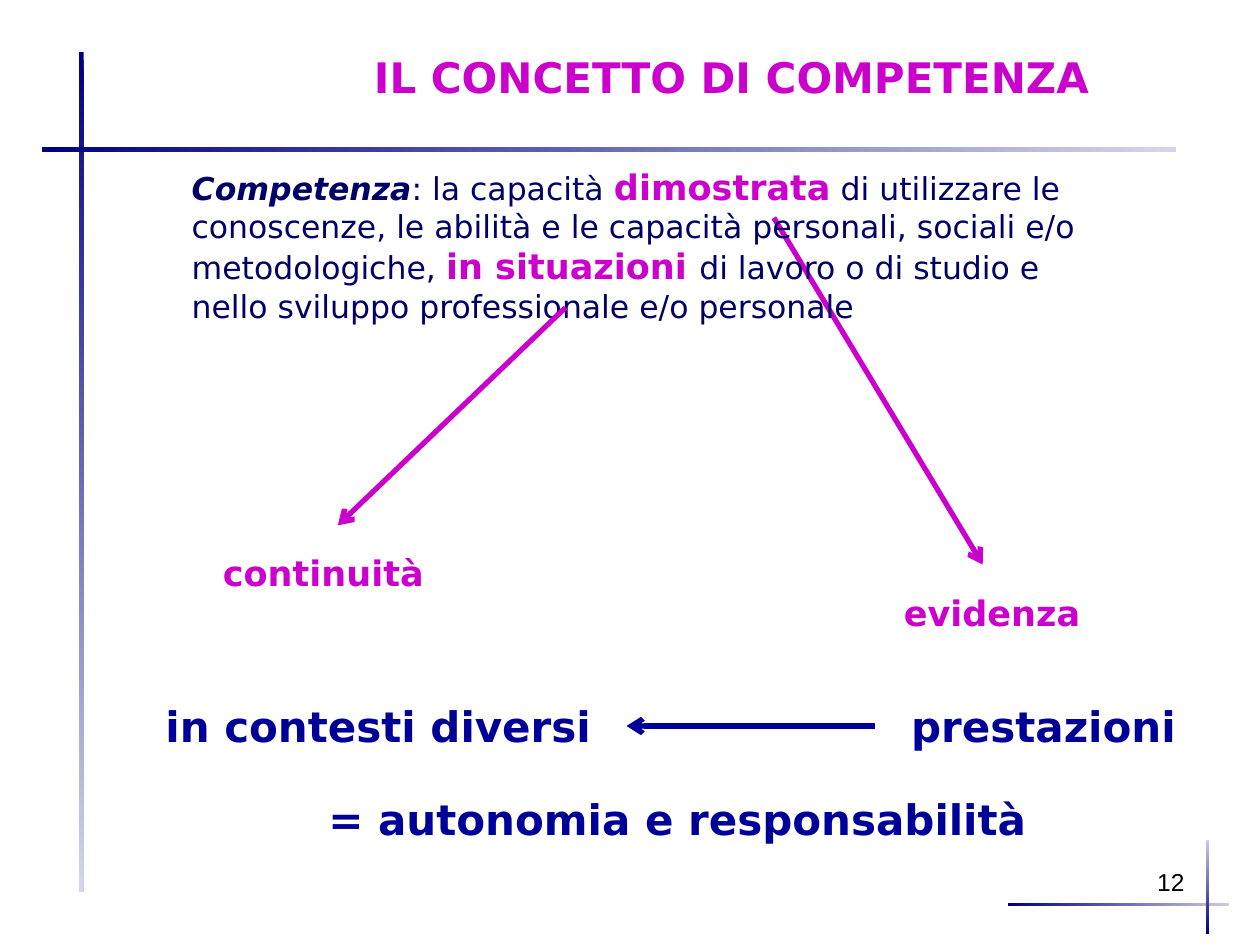
from dataclasses import dataclass

from lxml import etree
from pptx import Presentation
from pptx import util as u
from pptx.dml.color import RGBColor
from pptx.enum import shapes, text
from pptx.oxml.ns import qn


@dataclass(frozen=True)
class Theme:
    font: str = "DejaVu Sans"
    number_font: str = "Arial"
    accent: str = "CC00CC"
    body: str = "000066"
    strong: str = "000099"
    black: str = "000000"
    bar_dark: str = "000080"
    bar_light: str = "D5D5EA"
    corner_light: str = "CBCBE5"
    heading_size: int = 24
    label_size: int = 20
    body_size: int = 18
    number_size: int = 14
    arrow_width: int = 3


class SlideBuilder:
    def __init__(self, deck, theme):
        self.theme = theme
        self.slide = deck.slides.add_slide(deck.slide_layouts[1])

    def style(self, font, size, color, bold=False, italic=False, name=None):
        font.name = name or self.theme.font
        font.size = u.Pt(size)
        font.bold = bold
        font.italic = italic
        font.color.rgb = RGBColor.from_string(color)

    def frame(self, box):
        frame = box.text_frame
        frame.word_wrap = True
        frame.auto_size = text.MSO_AUTO_SIZE.NONE
        frame.vertical_anchor = text.MSO_ANCHOR.TOP
        return frame

    def place(self, box, left, top, width, height):
        box.left, box.top = u.Cm(left), u.Cm(top)
        box.width, box.height = u.Cm(width), u.Cm(height)
        # Bring the placeholder in front of what is already drawn
        self.slide.shapes.element.append(box.element)

    def title(self, words, *area):
        box = self.slide.shapes.title
        self.place(box, *area)
        para = self.frame(box).paragraphs[0]
        para.text = words
        para.alignment = text.PP_ALIGN.CENTER
        self.style(para.font, self.theme.heading_size, self.theme.accent, bold=True)

    def body(self, spans, *area):
        box = self.slide.placeholders[1]
        self.place(box, *area)
        para = self.frame(box).paragraphs[0]
        para.space_before = u.Pt(0)
        properties = para._p.get_or_add_pPr()
        properties.set("marL", "0")
        properties.set("indent", "0")
        etree.SubElement(properties, qn("a:buNone"))
        for words, *look in spans:
            span = para.add_run()
            span.text = words
            self.style(span.font, *look)

    def label(self, words, size, color, *area, bold=True, name=None,
              align=text.PP_ALIGN.CENTER):
        box = self.slide.shapes.add_textbox(*map(u.Cm, area))
        para = self.frame(box).paragraphs[0]
        para.text = words
        para.alignment = align
        self.style(para.font, size, color, bold, name=name)
        return box

    def bar(self, first, last, *area):
        left, top, width, height = map(u.Cm, area)
        bar = self.slide.shapes.add_shape(
            shapes.MSO_SHAPE.RECTANGLE, left, top, width, height)
        bar.shadow.inherit = False
        bar.line.fill.background()
        bar.fill.gradient()
        bar.fill.gradient_angle = 270 if height > width else 0
        for stop, color in zip(bar.fill.gradient_stops, (first, last)):
            stop.color.rgb = RGBColor.from_string(color)

    def arrow(self, color, *ends):
        arrow = self.slide.shapes.add_connector(
            shapes.MSO_CONNECTOR.STRAIGHT, *map(u.Cm, ends))
        arrow.line.color.rgb = RGBColor.from_string(color)
        arrow.line.width = u.Pt(self.theme.arrow_width)
        properties = arrow.element.spPr
        etree.SubElement(properties.find(qn("a:ln")), qn("a:tailEnd"), type="arrow")
        etree.SubElement(properties, qn("a:effectLst"))
        return arrow


def main():
    deck = Presentation()
    deck.slide_width, deck.slide_height = u.Cm(25.4), u.Cm(19.05)
    theme = Theme()
    page = SlideBuilder(deck, theme)

    # Frame of fading bars
    page.bar(theme.bar_dark, theme.bar_light, 1.59, 1.05, 0.1, 16.94)
    page.bar(theme.bar_dark, theme.corner_light, 20.32, 18.21, 4.45, 0.05)
    page.bar(theme.corner_light, theme.bar_dark, 24.32, 16.93, 0.05, 1.9)
    page.bar(theme.bar_dark, theme.bar_light, 0.84, 2.97, 22.86, 0.1)

    # Definition, with an arrow from each key phrase
    plain = (theme.body_size, theme.body)
    key = (theme.label_size, theme.accent, True)
    page.arrow(theme.accent, 15.6, 4.39, 19.81, 11.38)
    page.title("IL CONCETTO DI COMPETENZA", 4.7, 0.91, 20.09, 1.3)
    page.body([
        ("Competenza", *plain, True, True),
        (": la capacità ", *plain),
        ("dimostrata", *key),
        (" di utilizzare le conoscenze, le abilità e le capacità personali, "
         "sociali e/o metodologiche, ", *plain),
        ("in situazioni ", *key),
        ("di lavoro o di studio e nello sviluppo professionale e/o personale", *plain),
    ], 3.61, 3.2, 19.2, 3.51)
    page.arrow(theme.accent, 11.4, 6.2, 6.81, 10.59)

    # What the key phrases imply
    page.label("evidenza", theme.label_size, theme.accent, 14.6, 11.79, 10.8, 1.12)
    page.label("continuità", theme.label_size, theme.accent, 2.01, 11, 9.02, 1.12)

    # Conclusion
    heading = (theme.heading_size, theme.strong)
    performance = page.label("prestazioni", *heading, 17.63, 14, 6.81, 1.27)
    contexts = page.label("in contesti diversi", *heading, 2.62, 14, 10.01, 1.27)
    link = page.arrow(theme.strong, 17.63, 14.63, 12.63, 14.63)
    link.begin_connect(performance, 1)
    link.end_connect(contexts, 3)
    page.label("= autonomia e responsabilità", *heading, 5.16, 15.88, 16.99, 1.27)

    # Page number
    page.label("12", theme.number_size, theme.black, 18.21, 17.35, 5.92, 1.32,
               bold=False, name=theme.number_font, align=text.PP_ALIGN.RIGHT)

    deck.save("out.pptx")


if __name__ == "__main__":
    main()
